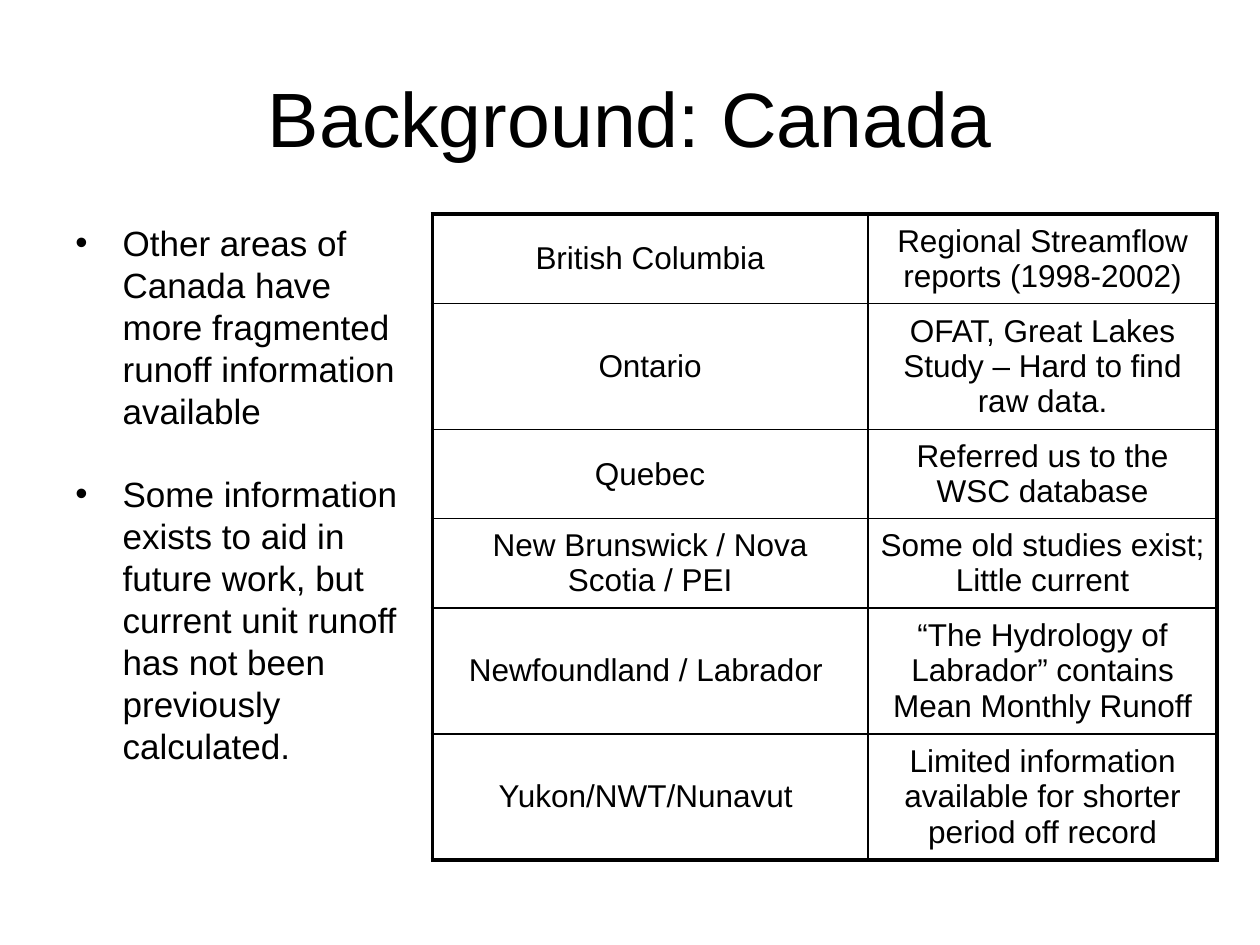
from dataclasses import dataclass

from lxml.etree import SubElement
from pptx import Presentation
from pptx.dml.color import RGBColor
from pptx.enum.text import MSO_ANCHOR, PP_ALIGN
from pptx.oxml import parse_xml
from pptx.oxml.ns import nsdecls, qn
from pptx.util import Pt


@dataclass(frozen=True)
class Theme:
    font: str = "Arial"
    ink: str = "000000"
    paper: str = "FFFFFF"
    title_size: int = 44
    body_size: int = 20
    table_size: int = 18
    outer_line: float = 2.25
    inner_line: float = 1


THEME = Theme()

POINTS = [
    "Other areas of Canada have more fragmented runoff information available",
    "Some information exists to aid in future work, but current unit runoff "
    "has not been previously calculated.",
]

# Row heights for cells of two and three lines
TWO_LINES, THREE_LINES = 51, 67.6

# Province, available information, row height
PROVINCES = [
    ("British Columbia", "Regional Streamflow reports (1998-2002)", TWO_LINES),
    ("Ontario", "OFAT, Great Lakes Study – Hard to find raw data.", THREE_LINES),
    ("Quebec", "Referred us to the WSC database", TWO_LINES),
    ("New Brunswick / Nova Scotia / PEI",
     "Some old studies exist; Little current", TWO_LINES),
    ("Newfoundland / Labrador ",
     "“The Hydrology of Labrador” contains Mean Monthly Runoff", THREE_LINES),
    ("Yukon/NWT/Nunavut ",
     "Limited information available for shorter period off record", THREE_LINES),
]
COLUMN_WIDTHS = (249, 199.5)


def format_runs(paragraph, size):
    for run in paragraph.runs:
        run.font.name = THEME.font
        run.font.size = Pt(size)
        run.font.color.rgb = RGBColor.from_string(THEME.ink)


def add_title(slide, wording):
    title = slide.shapes.title
    title.left, title.top = Pt(36), Pt(21.6)
    title.width, title.height = Pt(648), Pt(90)
    frame = title.text_frame
    frame.text = wording
    frame.vertical_anchor = MSO_ANCHOR.MIDDLE
    heading = frame.paragraphs[0]
    heading.alignment = PP_ALIGN.CENTER
    format_runs(heading, THEME.title_size)


def add_bullet(paragraph, indent):
    properties = paragraph._p.get_or_add_pPr()
    properties.set("marL", str(Pt(indent)))
    properties.set("indent", str(-Pt(indent)))
    SubElement(properties, qn("a:buFont"), typeface=THEME.font)
    SubElement(properties, qn("a:buChar"), char="•")


def add_bullet_list(slide, points):
    box = slide.shapes.add_textbox(Pt(36), Pt(123), Pt(205), Pt(384.5))
    frame = box.text_frame
    frame.word_wrap = True
    for index, wording in enumerate(points):
        point = frame.add_paragraph() if index else frame.paragraphs[0]
        point.text = wording
        add_bullet(point, 27)
        point.line_spacing = Pt(24)
        if index:
            point.space_before = Pt(23.5)
        format_runs(point, THEME.body_size)


def set_borders(cell, outer_sides):
    properties = cell._tc.get_or_add_tcPr()
    for position, side in enumerate("LRTB"):
        width = THEME.outer_line if side in outer_sides else THEME.inner_line
        properties.insert(position, parse_xml(
            f'<a:ln{side} {nsdecls("a")} w="{Pt(width)}"><a:solidFill>'
            f'<a:srgbClr val="{THEME.ink}"/></a:solidFill></a:ln{side}>'))


def fill_cell(cell, wording, outer_sides):
    cell.text_frame.text = wording
    cell.vertical_anchor = MSO_ANCHOR.MIDDLE
    entry = cell.text_frame.paragraphs[0]
    entry.alignment = PP_ALIGN.CENTER
    format_runs(entry, THEME.table_size)
    cell.fill.solid()
    cell.fill.fore_color.rgb = RGBColor.from_string(THEME.paper)
    set_borders(cell, outer_sides)


def add_province_table(slide, provinces):
    total_height = sum(height for *_, height in provinces)
    table = slide.shapes.add_table(
        len(provinces), len(COLUMN_WIDTHS), Pt(247), Pt(122.4),
        Pt(sum(COLUMN_WIDTHS)), Pt(total_height)).table
    table.first_row = table.horz_banding = False
    for column, width in zip(table.columns, COLUMN_WIDTHS):
        column.width = Pt(width)
    last_row = len(provinces) - 1
    for row, (province, information, height) in enumerate(provinces):
        table.rows[row].height = Pt(height)
        edge = {0: "T", last_row: "B"}.get(row, "")
        fill_cell(table.cell(row, 0), province, "L" + edge)
        fill_cell(table.cell(row, 1), information, "R" + edge)


def main():
    deck = Presentation()
    deck.slide_width, deck.slide_height = Pt(720), Pt(540)
    slide = deck.slides.add_slide(deck.slide_layouts[5])

    # Heading
    add_title(slide, "Background: Canada")
    # Findings on the left
    add_bullet_list(slide, POINTS)
    # Information by province on the right
    add_province_table(slide, PROVINCES)

    deck.save("out.pptx")


if __name__ == "__main__":
    main()
